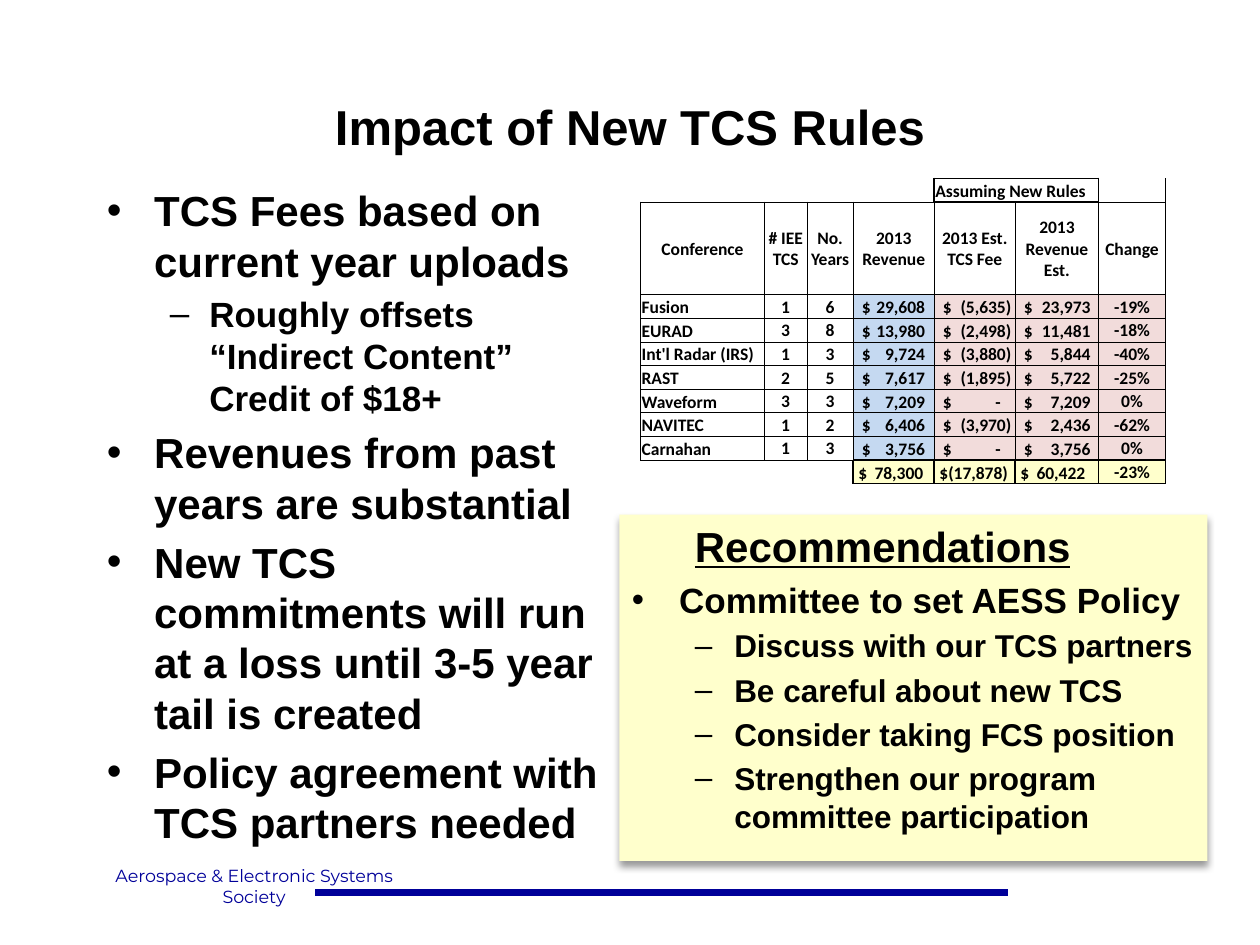
from dataclasses import dataclass

from lxml.etree import SubElement
from pptx import Presentation
from pptx.dml.color import RGBColor
from pptx.enum.shapes import MSO_CONNECTOR, MSO_SHAPE
from pptx.enum.text import MSO_ANCHOR, PP_ALIGN
from pptx.oxml.ns import qn
from pptx.util import Pt


@dataclass(frozen=True)
class Theme:
    """Colours, fonts and type sizes of the slide."""
    ink: str = "000000"
    navy: str = "000099"
    cream: str = "FFFFCC"
    blue: str = "C5D9F1"
    pink: str = "F2DCDB"
    font: str = "Arial"
    table_font: str = "Calibri"
    footer_font: str = "Montserrat"
    title: int = 28
    large: int = 24
    medium: int = 20
    small: int = 18
    tiny: int = 10


THEME = Theme()
NO_STYLE = "{2D5ABB26-0587-4C30-8999-92F81FD0307C}"
COLUMN_WIDTHS = [70.8, 24.3, 26.5, 46.3, 46.3, 47.6, 38.2]
HEADER_HEIGHT, ROW_HEIGHT = 53, 13.5
TOTAL_ROW = 9
MONEY_TABS = {3: 36, 4: 39, 5: 38}
DASH_TAB, TOTAL_TAB = 33, 37
TABLE_ROWS = [
    ["", "", "", "", "Assuming New Rules", "", ""],
    ["Conference", "# IEE TCS", "No. Years", "2013 Revenue", "2013 Est. TCS Fee",
     "2013 Revenue Est.", "Change"],
    ["Fusion", "1", "6", "$\t29,608", "$\t(5,635)", "$\t23,973", "-19%"],
    ["EURAD", "3", "8", "$\t13,980", "$\t(2,498)", "$\t11,481", "-18%"],
    ["Int'l Radar (IRS)", "1", "3", "$\t9,724", "$\t(3,880)", "$\t5,844", "-40%"],
    ["RAST", "2", "5", "$\t7,617", "$\t(1,895)", "$\t5,722", "-25%"],
    ["Waveform", "3", "3", "$\t7,209", "$\t-", "$\t7,209", "0%"],
    ["NAVITEC", "1", "2", "$\t6,406", "$\t(3,970)", "$\t2,436", "-62%"],
    ["Carnahan", "1", "3", "$\t3,756", "$\t-", "$\t3,756", "0%"],
    ["", "", "", "$\t78,300", "$(17,878)", "$\t60,422", "-23%"],
]
LEVELS = {"heading": (1, 36, 0, ""), "point": (0, 27, -27, "•"), "detail": (1, 58.5, -22.5, "–")}
IMPACTS = [
    ("point", THEME.large, "TCS Fees based on current year uploads"),
    ("detail", THEME.medium, "Roughly offsets “Indirect Content” Credit of $18+"),
    ("point", THEME.large, "Revenues from past years are substantial"),
    ("point", THEME.large, "New TCS commitments will run at a loss until 3-5 year tail is created"),
    ("point", THEME.large, "Policy agreement with TCS partners needed"),
]
RECOMMENDATIONS = [
    ("heading", THEME.large, "Recommendations"),
    ("point", THEME.medium, "Committee to set AESS Policy"),
    ("detail", THEME.small, "Discuss with our TCS partners"),
    ("detail", THEME.small, "Be careful about new TCS"),
    ("detail", THEME.small, "Consider taking FCS position"),
    ("detail", THEME.small, "Strengthen our program committee participation"),
]


def set_font(para, size, name=THEME.font, color=THEME.ink, bold=True):
    """Set the font shared by all spans of a paragraph."""
    para.font.size, para.font.name, para.font.bold = Pt(size), name, bold
    para.font.color.rgb = RGBColor.from_string(color)


def add_box(slide, left, top, width, height, anchor, wrap=True):
    """Add an empty text box and return its text frame."""
    frame = slide.shapes.add_textbox(Pt(left), Pt(top), Pt(width), Pt(height)).text_frame
    frame.word_wrap, frame.vertical_anchor = wrap, anchor
    return frame


def add_centred_lines(frame, lines, **font):
    """Write centred lines in one font."""
    for index, line in enumerate(lines):
        para = frame.add_paragraph() if index else frame.paragraphs[0]
        para.text, para.alignment = line, PP_ALIGN.CENTER
        set_font(para, **font)


def add_outline(frame, items):
    """Write headings, bullet points and their details."""
    for index, (kind, size, text) in enumerate(items):
        para = frame.add_paragraph() if index else frame.paragraphs[0]
        level, margin, indent, bullet = LEVELS[kind]
        para.text, para.level, para.alignment = text, level, PP_ALIGN.LEFT
        properties = para._p.get_or_add_pPr()
        properties.set("marL", str(Pt(margin)))
        properties.set("indent", str(Pt(indent)))
        if bullet:
            SubElement(properties, qn("a:buFont"), typeface=THEME.font)
            SubElement(properties, qn("a:buChar"), char=bullet)
        para.space_before = Pt(0.2 * size if index else 0)
        set_font(para, size)
        para.font.underline = kind == "heading"


def add_panel(slide):
    """Add the shadowed recommendations panel."""
    panel = slide.shapes.add_shape(MSO_SHAPE.RECTANGLE, Pt(354), Pt(294), Pt(336), Pt(198))
    panel.fill.solid()
    panel.fill.fore_color.rgb = RGBColor.from_string(THEME.cream)
    panel.line.fill.background()
    panel.shadow.inherit = False
    effects = panel._element.spPr.find(qn("a:effectLst"))
    shadow = SubElement(effects, qn("a:outerShdw"), blurRad=str(Pt(4)), dist=str(Pt(3)),
                        dir="5400000", rotWithShape="0")
    color = SubElement(shadow, qn("a:srgbClr"), val=THEME.ink)
    SubElement(color, qn("a:alpha"), val="40000")
    panel.text_frame.word_wrap = True
    panel.text_frame.vertical_anchor = MSO_ANCHOR.TOP
    add_outline(panel.text_frame, RECOMMENDATIONS)


def is_framed(row, column):
    """Tell whether a grid place holds a bordered cell."""
    inside = 0 <= row < len(TABLE_ROWS) and 0 <= column < len(COLUMN_WIDTHS)
    return inside and (bool(TABLE_ROWS[row][column]) or (row, column) == (0, 5))


def draw_borders(cell, row, column):
    """Draw each side that touches a bordered cell, heavier at both ends."""
    sides = {"a:lnL": (row, column - 1), "a:lnR": (row, column + 1),
             "a:lnT": (row - 1, column), "a:lnB": (row + 1, column)}
    for side, neighbour in sides.items():
        framed = [place for place in ((row, column), neighbour) if is_framed(*place)]
        if framed:
            heavy = any(place[0] in (0, TOTAL_ROW) for place in framed)
            line = SubElement(cell._tc.get_or_add_tcPr(), qn(side), w=str(Pt(1 if heavy else 0.5)))
            fill = SubElement(line, qn("a:solidFill"))
            SubElement(fill, qn("a:srgbClr"), val=THEME.ink)


def fill_cell(cell, row, column):
    """Colour a cell by its row and column."""
    color = None
    if row == TOTAL_ROW and column >= 3:
        color = THEME.cream
    elif row >= 2 and column >= 3:
        color = THEME.blue if column == 3 else THEME.pink
    if color:
        cell.fill.solid()
        cell.fill.fore_color.rgb = RGBColor.from_string(color)
    else:
        cell.fill.background()


def write_cell(cell, row, column, text):
    """Write one table cell, lining amounts up on a right tab."""
    money = text.startswith("$")
    left_aligned = money or row == 0 or column == 0 and row > 1
    cell.margin_left = Pt((3 if row == TOTAL_ROW else 5) if money else 0.7)
    cell.margin_right, cell.margin_top, cell.margin_bottom = Pt(0.7), Pt(0.7), Pt(0)
    cell.vertical_anchor = MSO_ANCHOR.BOTTOM if left_aligned else MSO_ANCHOR.MIDDLE
    para = cell.text_frame.paragraphs[0]
    para.alignment = PP_ALIGN.LEFT if left_aligned else PP_ALIGN.CENTER
    if "\t" in text:
        stop = DASH_TAB if text.endswith("-") else MONEY_TABS[column]
        stop = TOTAL_TAB if row == TOTAL_ROW else stop
        tabs = SubElement(para._p.get_or_add_pPr(), qn("a:tabLst"))
        SubElement(tabs, qn("a:tab"), pos=str(Pt(stop)), algn="r")
    if text:
        para.add_run().text = text
    else:
        SubElement(para._p, qn("a:endParaRPr"), sz=str(THEME.tiny * 100))
    set_font(para, THEME.tiny, THEME.table_font)


def add_revenue_table(slide):
    """Add the table of conference revenues."""
    heights = [HEADER_HEIGHT if row == 1 else ROW_HEIGHT for row in range(len(TABLE_ROWS))]
    frame = slide.shapes.add_table(len(heights), len(COLUMN_WIDTHS), Pt(366), Pt(102),
                                   Pt(sum(COLUMN_WIDTHS)), Pt(sum(heights)))
    table = frame.table
    table.first_row = table.horz_banding = False
    table._tbl.tblPr.find(qn("a:tableStyleId")).text = NO_STYLE
    for column, width in zip(table.columns, COLUMN_WIDTHS):
        column.width = Pt(width)
    for row, height in enumerate(heights):
        table.rows[row].height = Pt(height)
        for column, text in enumerate(TABLE_ROWS[row]):
            cell = table.cell(row, column)
            write_cell(cell, row, column, text)
            draw_borders(cell, row, column)
            fill_cell(cell, row, column)
    table.cell(0, 4).merge(table.cell(0, 5))


def add_rule(slide):
    """Add the footer line."""
    rule = slide.shapes.add_connector(MSO_CONNECTOR.STRAIGHT, Pt(180), Pt(510), Pt(576), Pt(510))
    rule.line.width = Pt(4)
    rule.line.color.rgb = RGBColor.from_string(THEME.navy)
    SubElement(rule._element.spPr, qn("a:effectLst"))


def main():
    """Build and save the deck."""
    deck = Presentation()
    deck.slide_width, deck.slide_height = Pt(720), Pt(540)
    slide = deck.slides.add_slide(deck.slide_layouts[6])
    add_rule(slide)
    footer = add_box(slide, 48, 462, 194.4, 60, MSO_ANCHOR.BOTTOM, wrap=False)
    add_centred_lines(footer, ["Aerospace & Electronic Systems", "Society"], size=THEME.tiny,
                      name=THEME.footer_font, color=THEME.navy, bold=False)
    title = add_box(slide, 54, 48, 612, 48, MSO_ANCHOR.MIDDLE)
    add_centred_lines(title, ["Impact of New TCS Rules"], size=THEME.title)
    add_outline(add_box(slide, 54, 102, 300, 360, MSO_ANCHOR.TOP), IMPACTS)
    add_revenue_table(slide)
    add_panel(slide)
    deck.save("out.pptx")


if __name__ == "__main__":
    main()
